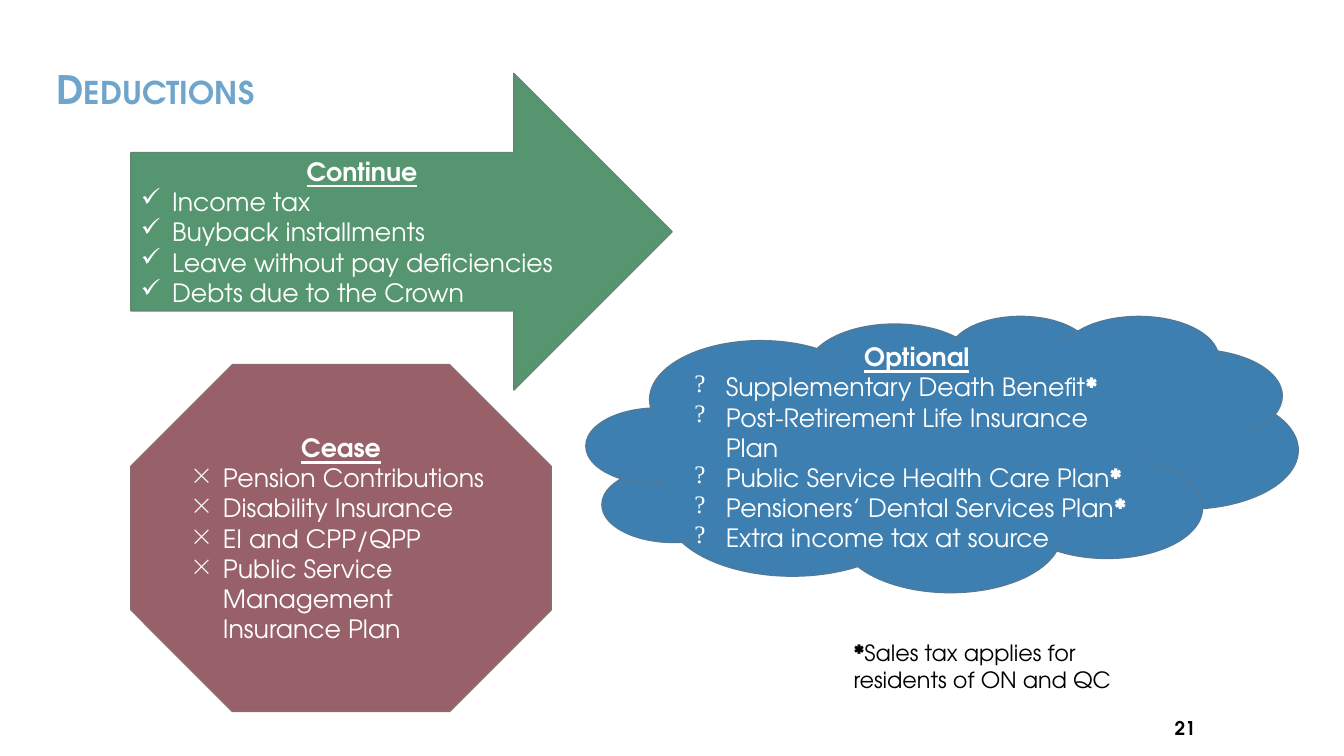
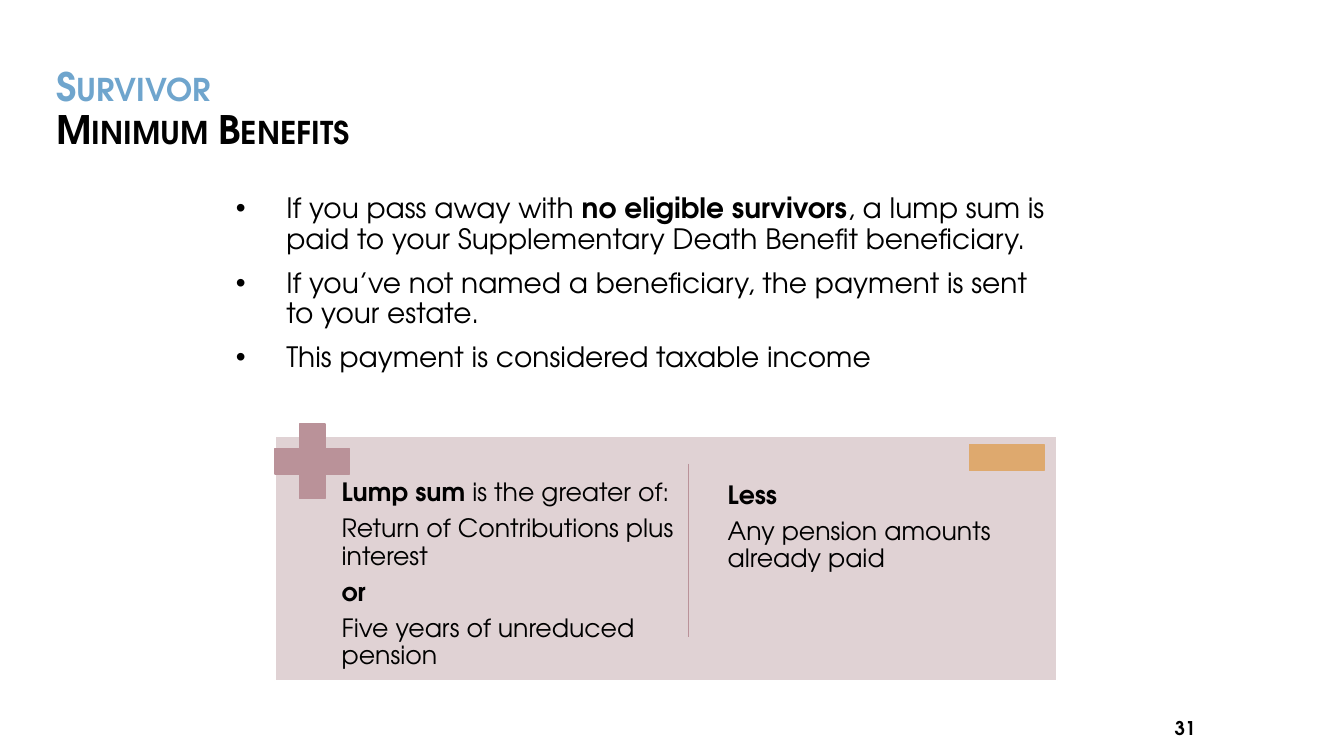
import copy

import pptx
import pptx.dml.color
import pptx.enum.shapes
import pptx.enum.text
import pptx.oxml.ns
import pptx.util
from lxml import etree

Cm = pptx.util.Cm
Pt = pptx.util.Pt
qn = pptx.oxml.ns.qn
Shapes = pptx.enum.shapes.MSO_SHAPE
Align = pptx.enum.text.PP_ALIGN
Anchor = pptx.enum.text.MSO_ANCHOR

FONT = "TeX Gyre Adventor"
COLOURS = {
    "black": "000000",
    "white": "FFFFFF",
    "heading": "6FA5CD",
    "continue": "559670",
    "continue line": "608870",
    "optional": "3D7FB0",
    "optional line": "527A98",
    "cease": "98616A",
    "cease line": "8A6C71",
    "panel": "E0D2D4",
    "plus": "BA9299",
    "minus": "DEA96E",
}


def colour(name):
    return pptx.dml.color.RGBColor.from_string(COLOURS[name])


class Deck:
    """Holds the presentation, its style and the slide being built."""

    def __init__(self):
        self.presentation = pptx.Presentation()
        self.presentation.slide_width = Cm(33.87)
        self.presentation.slide_height = Cm(19.05)
        self.slide = None

    def add_slide(self, layout, number):
        layouts = self.presentation.slide_layouts
        self.slide = self.presentation.slides.add_slide(layouts.get_by_name(layout))
        self.text_box((24.66, 17.93, 5.72, 0.76), [[(number, True)]], 13.5,
                      alignment=Align.RIGHT)

    def place(self, shape, box):
        shape.left, shape.top, shape.width, shape.height = map(Cm, box)

    def run(self, paragraph, text, size, bold=False, color="black"):
        run = paragraph.add_run()
        run.text = text
        run.font.name = FONT
        run.font.size = Pt(size)
        run.font.bold = bold
        run.font.color.rgb = colour(color)
        return run

    def bullet(self, paragraph, character, indent):
        properties = paragraph._p.get_or_add_pPr()
        properties.set("marL", str(Cm(indent)))
        properties.set("indent", str(-Cm(indent)))
        etree.SubElement(properties, qn("a:buChar")).set("char", character)

    def paragraphs(self, frame, items, size, color="black", bullet=None, indent=0,
                   alignment=Align.LEFT, spacing=1.0, before=0, after=0, append=False):
        """Write items, each a list of (text, bold) runs, into the frame."""
        for index, item in enumerate(items):
            is_first = index == 0 and not append
            paragraph = frame.paragraphs[0] if is_first else frame.add_paragraph()
            if bullet:
                self.bullet(paragraph, bullet, indent)
            paragraph.alignment = alignment
            paragraph.line_spacing = spacing
            paragraph.space_before = Pt(0 if is_first else before)
            paragraph.space_after = Pt(after)
            for text, bold in item:
                self.run(paragraph, text, size, bold, color)

    def title(self, box, lines):
        """Write (text, colour) lines in small capitals."""
        title = self.slide.shapes.title
        self.place(title, box)
        frame = title.text_frame
        frame.auto_size = pptx.enum.text.MSO_AUTO_SIZE.NONE
        frame.vertical_anchor = Anchor.MIDDLE
        paragraph = frame.paragraphs[0]
        paragraph.alignment = Align.LEFT
        paragraph.line_spacing = 0.9
        for index, (text, color) in enumerate(lines):
            if index:
                paragraph.add_line_break()
                line_break = paragraph._p.findall(qn("a:br"))[-1]
                line_break.append(copy.deepcopy(run.font._element))
            run = self.run(paragraph, text, 28, True, color)
            run.font._element.set("cap", "small")

    def body(self, box, items):
        body = self.slide.placeholders[1]
        self.place(body, box)
        body.text_frame.auto_size = pptx.enum.text.MSO_AUTO_SIZE.NONE
        self.paragraphs(body.text_frame, items, 20, bullet="•", indent=1.27,
                        spacing=0.9, before=10)

    def text_box(self, box, items, size, inset=None, top_inset=None, **style):
        frame = self.slide.shapes.add_textbox(*map(Cm, box)).text_frame
        frame.word_wrap = True
        if inset is not None:
            frame.margin_left = frame.margin_right = frame.margin_bottom = Cm(inset)
            frame.margin_top = Cm(inset if top_inset is None else top_inset)
        self.paragraphs(frame, items, size, **style)

    def shape(self, kind, box, fill, line):
        shape = self.slide.shapes.add_shape(kind, *map(Cm, box))
        shape.shadow.inherit = False
        shape.fill.solid()
        shape.fill.fore_color.rgb = colour(fill)
        shape.line.color.rgb = colour(line)
        shape.line.width = Pt(1)
        return shape

    def list_shape(self, kind, box, fill, heading, bullet, items):
        frame = self.shape(kind, box, fill, fill + " line").text_frame
        frame.word_wrap = True
        frame.vertical_anchor = Anchor.MIDDLE
        self.paragraphs(frame, [[(heading, True)]], 18, "white", alignment=Align.CENTER)
        frame.paragraphs[0].runs[0].font.underline = True
        self.paragraphs(frame, items, 18, "white", bullet=bullet, indent=0.79, append=True)

    def line(self, start, end, color):
        line = self.slide.shapes.add_connector(
            pptx.enum.shapes.MSO_CONNECTOR.STRAIGHT, *map(Cm, start + end))
        line.line.color.rgb = colour(color)
        line.line.width = Pt(1)
        etree.SubElement(line._element.spPr, qn("a:effectLst"))


def plain(*texts):
    return [[(text, False)] for text in texts]


def starred(text):
    return [(text, False), ("*", True)]


def build_deductions(deck):
    deck.add_slide("Title Only", "21")
    deck.title((1.17, 1.6, 5.66, 1.45), [("Deductions", "heading")])
    deck.list_shape(
        Shapes.RIGHT_ARROW, (3.3, 1.85, 13.64, 7.98), "continue", "Continue", "✓",
        plain("Income tax", "Buyback installments", "Leave without pay deficiencies",
              "Debts due to the Crown"))
    deck.list_shape(
        Shapes.CLOUD, (14.78, 7.95, 17.93, 6.96), "optional", "Optional", "?",
        [starred("Supplementary Death Benefit"),
         *plain("Post-Retirement Life Insurance Plan"),
         starred("Public Service Health Care Plan"),
         starred("Pensioners’ Dental Services Plan"),
         *plain("Extra income tax at source")])
    deck.list_shape(
        Shapes.OCTAGON, (3.3, 9.19, 10.59, 8.74), "cease", "Cease", "×",
        plain("Pension Contributions", "Disability Insurance", "EI and CPP/QPP",
              "Public Service Management Insurance Plan"))
    deck.text_box((21.26, 15.98, 7.85, 1.63),
                  [[("*", True), ("Sales tax applies for residents of ON and QC", False)]], 16)


def build_survivor(deck):
    deck.add_slide("Title and Content", "31")
    deck.title((1.17, 1.6, 8.28, 2.36),
               [("Survivor", "heading"), ("Minimum Benefits", "black")])
    deck.body((5.69, 4.78, 21.13, 5.41), [
        [("If you pass away with ", False), ("no eligible survivors", True),
         (", a lump sum is paid to your Supplementary Death Benefit beneficiary.", False)],
        *plain("If you’ve not named a beneficiary, the payment is sent to your estate.",
               "This payment is considered taxable income")])

    deck.shape(Shapes.RECTANGLE, (6.93, 11, 19.71, 6.15), "panel", "white")
    deck.text_box((8.53, 11.13, 8.84, 6.5), [
        [("Lump sum ", True), ("is the greater of:", False)],
        *plain("Return of Contributions plus interest"),
        [("or", True)],
        *plain("Five years of unreduced pension")],
        18, inset=0.08, top_inset=0.97, spacing=0.9, after=6.3)
    deck.text_box((18.24, 12.07, 7.98, 4.65),
                  [[("Less", True)], *plain("Any pension amounts already paid")],
                  18, inset=0.1, spacing=0.9, after=6.3)
    plus = deck.shape(Shapes.CROSS, (6.93, 10.69, 1.88, 1.88), "plus", "plus")
    plus.adjustments[0] = 0.33
    deck.shape(Shapes.RECTANGLE, (24.43, 11.2, 1.88, 0.66), "minus", "minus")
    deck.line((17.35, 11.68), (17.35, 16.05), "plus")


def main():
    deck = Deck()
    build_deductions(deck)
    build_survivor(deck)
    deck.presentation.save("out.pptx")


if __name__ == "__main__":
    main()
